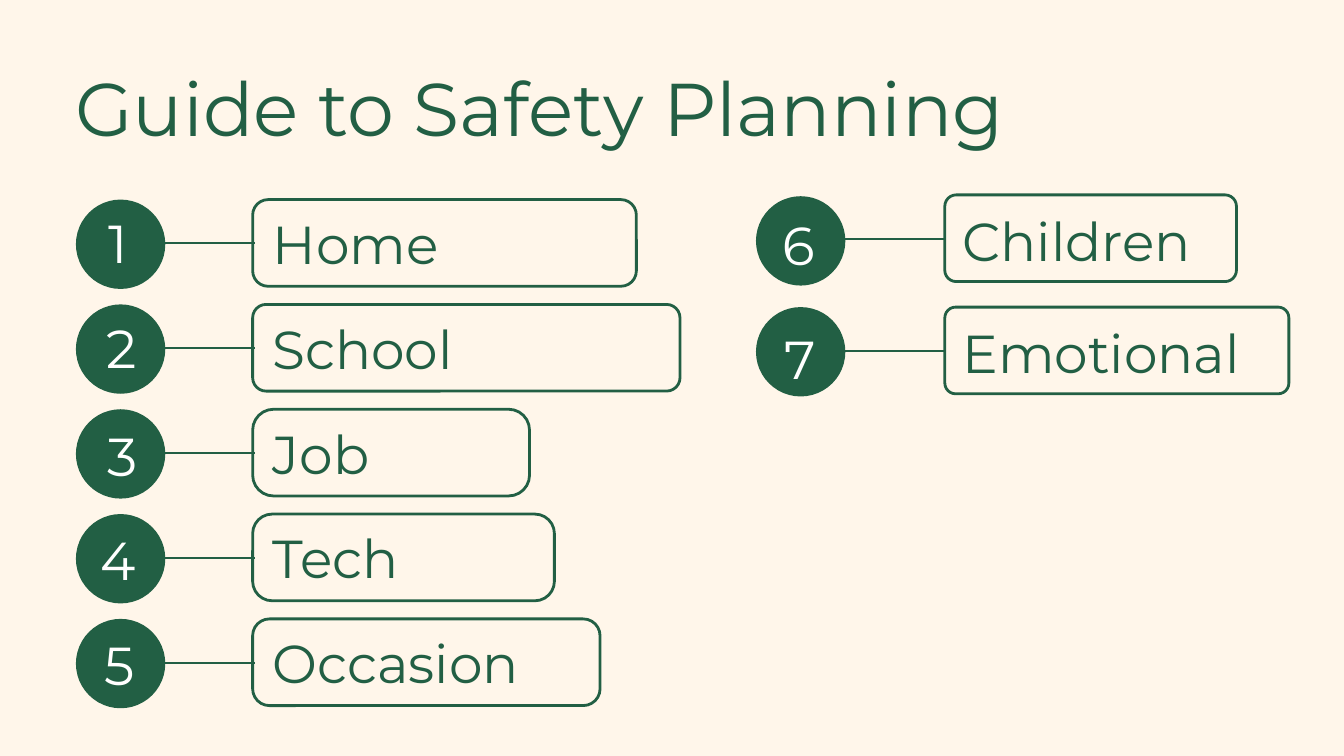
from pptx import Presentation
from pptx.dml.color import RGBColor
from pptx.enum.shapes import MSO_CONNECTOR as Conn, MSO_SHAPE as Kind
from pptx.enum.text import MSO_ANCHOR as Anchor, MSO_AUTO_SIZE as Auto, PP_ALIGN as Align
from pptx.oxml.ns import qn
from pptx.util import Inches, Pt
from lxml.etree import SubElement

GREEN = RGBColor(0x22, 0x5F, 0x44)
CREAM = RGBColor(0xFF, 0xF6, 0xEA)
WHITE = RGBColor(0xFF, 0xFF, 0xFF)

FRAME = dict(margin_left=0, margin_top=0, margin_right=0, margin_bottom=0,
             word_wrap=True, auto_size=Auto.NONE, vertical_anchor=Anchor.TOP)
TITLE = dict(size=Pt(80), name="Montserrat", bold=False)
BODY = dict(size=Pt(57.2), name="Montserrat")


def style(item, form):
    for key, value in form.items():
        setattr(item, key, value)


def write(shape, text, font, color, lead, align):
    frame = shape.text_frame
    style(frame, FRAME)
    para = frame.paragraphs[0]
    style(para, dict(alignment=align, line_spacing=Pt(lead)))
    run = para.add_run()
    run.text = text
    style(run.font, font)
    run.font.color.rgb = color


deck = Presentation()
style(deck, dict(slide_width=Inches(20), slide_height=Inches(11.25)))
slide = deck.slides.add_slide(deck.slide_layouts[5])
slide.background.fill.solid()
slide.background.fill.fore_color.rgb = CREAM
shapes = slide.shapes

title = shapes.title
style(title, dict(left=Inches(1.12), top=Inches(0.92),
                  width=Inches(15.62), height=Inches(1.35)))
write(title, "Guide to Safety Planning", TITLE, GREEN, 96, Align.LEFT)

SIZE, HIGH, STEP = 1.33, 1.29, 1.56

# columns: circle left, line start, line end, box left, label left, label drop
LEFT = (1.13, 1.98, 3.79, 3.76, 4.06, 0.17)
RIGHT = (11.25, 12.25, 14.06, 14.06, 14.32, 0.2)

# rows: column, label, box top, circle top, box width, corner, digit left, digit top
first = [
    ("Home", 5.71, 0.23, 1.61, 3.13),
    ("School", 6.36, 0.2, 1.59, 4.69),
    ("Job", 4.12, 0.31, 1.6, 6.29),
    ("Tech", 4.49, 0.29, 1.5, 7.84),
    ("Occasion", 5.17, 0.25, 1.55, 9.4),
]
rows = [(LEFT, label, 2.97 + STEP * i, 2.97 + STEP * i, *rest)
        for i, (label, *rest) in enumerate(first)]
rows += [
    (RIGHT, "Children", 2.9, 2.92, 4.34, 0.17, 11.64, 3.16),
    (RIGHT, "Emotional", 4.57, 4.57, 5.12, 0.16, 11.67, 4.85),
]

for num, row in enumerate(rows, 1):
    column, label, top, rise, wide, curve, dx, dy = row
    disc, start, end, edge, inset, drop = column

    box = shapes.add_shape(Kind.ROUNDED_RECTANGLE, Inches(edge), Inches(top),
                           Inches(wide), Inches(HIGH))
    box.shadow.inherit = False
    box.adjustments[0] = curve / HIGH
    box.fill.background()
    box.line.color.rgb = GREEN
    box.line.width = Pt(3)

    dot = shapes.add_shape(Kind.OVAL, Inches(disc), Inches(rise),
                           Inches(SIZE), Inches(SIZE))
    dot.shadow.inherit = False
    dot.fill.solid()
    dot.fill.fore_color.rgb = GREEN
    dot.line.fill.background()

    level = Inches(top + 0.65)
    link = shapes.add_connector(Conn.STRAIGHT, Inches(start), level, Inches(end), level)
    link.line.color.rgb = GREEN
    link.line.width = Pt(2.25)
    SubElement(link._element.spPr, qn("a:effectLst"))

    name = shapes.add_textbox(Inches(inset), Inches(top + drop),
                              Inches(wide - 0.4), Inches(0.95))
    write(name, label, BODY, GREEN, 68.7, Align.JUSTIFY)

    digit = shapes.add_textbox(Inches(dx), Inches(dy), Inches(0.6), Inches(0.95))
    write(digit, str(num), BODY, WHITE, 68.7, Align.JUSTIFY)

deck.save("out.pptx")
